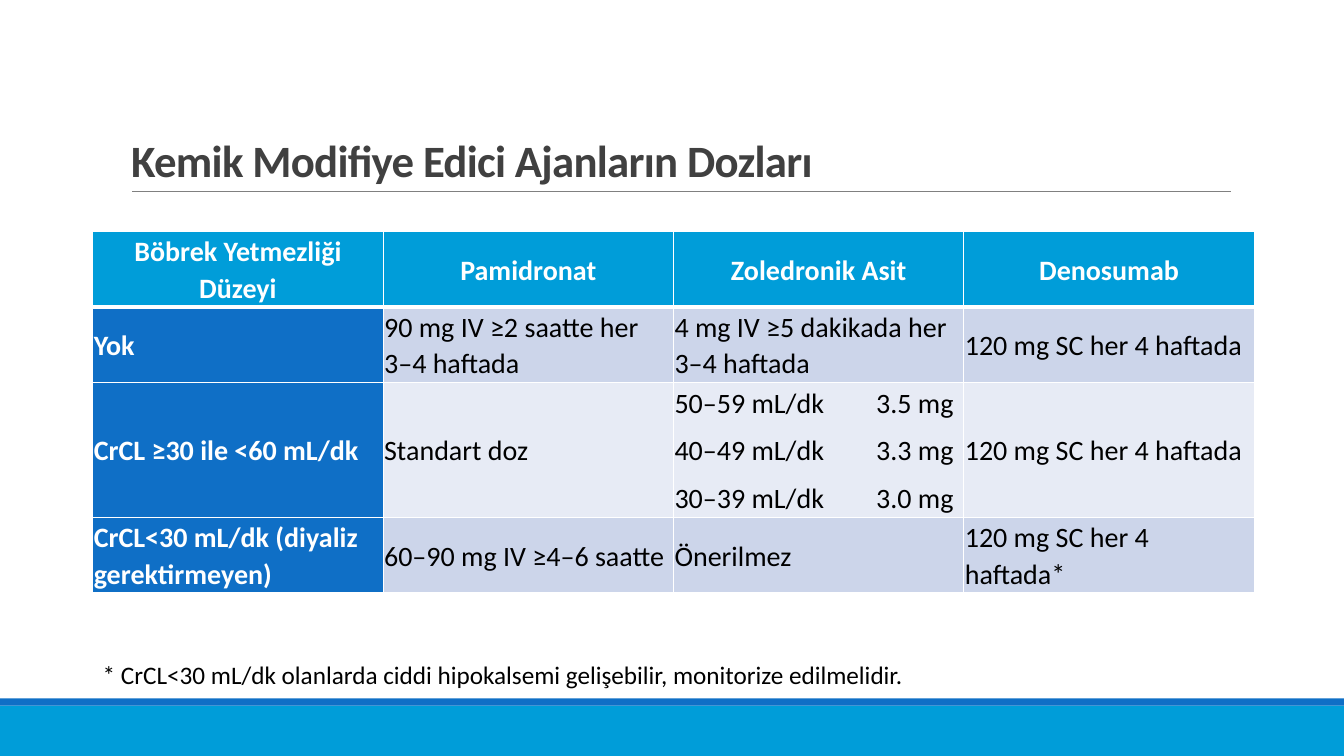
from lxml.etree import SubElement
from pptx import Presentation
from pptx.dml.color import RGBColor
from pptx.enum.shapes import MSO_CONNECTOR, MSO_SHAPE
from pptx.enum.text import MSO_ANCHOR, MSO_AUTO_SIZE, PP_ALIGN
from pptx.oxml.ns import qn
from pptx.util import Inches, Pt

TITLE = "Kemik Modifiye Edici Ajanların Dozları"
FOOTNOTE = "* CrCL<30 mL/dk olanlarda ciddi hipokalsemi gelişebilir, monitorize edilmelidir."
DOSES = [
    ["Böbrek Yetmezliği Düzeyi", "Pamidronat", "Zoledronik Asit", "Denosumab"],
    ["Yok", "90 mg IV ≥2 saatte her 3–4 haftada",
     "4 mg IV ≥5 dakikada her 3–4 haftada", "120 mg SC her 4 haftada"],
    ["CrCL ≥30 ile <60 mL/dk", "Standart doz",
     "50–59 mL/dk\t3.5 mg\n40–49 mL/dk\t3.3 mg\n30–39 mL/dk\t3.0 mg",
     "120 mg SC her 4 haftada"],
    ["CrCL<30 mL/dk (diyaliz gerektirmeyen)", "60–90 mg IV ≥4–6 saatte",
     "Önerilmez", "120 mg SC her 4 haftada*"],
]
ROW_HEIGHTS = [0.74, 0.74, 1.34, 0.74]
COLUMN_WIDTH = 2.88
DOSE_TAB = 2
COLORS = {
    "cyan": "009DD9", "blue": "0F6FC6", "odd_row": "CCD5EA", "even_row": "E7EBF5",
    "title": "404040", "rule": "808080", "white": "FFFFFF", "black": "000000",
}


def color(name):
    return RGBColor.from_string(COLORS[name])


def add_span(para, text, size, color_name, bold=False):
    span = para.add_run()
    span.text = text
    span.font.name = "Calibri"
    span.font.size = Pt(size)
    span.font.bold = bold
    span.font.color.rgb = color(color_name)
    return span


def add_bar(page, top, height, color_name):
    bar = page.shapes.add_shape(
        MSO_SHAPE.RECTANGLE, 0, Inches(top), Inches(13.33), Inches(height))
    bar.shadow.inherit = False
    bar.fill.solid()
    bar.fill.fore_color.rgb = color(color_name)
    bar.line.fill.background()


def add_title(page):
    rule = page.shapes.add_connector(
        MSO_CONNECTOR.STRAIGHT, Inches(1.31), Inches(1.9), Inches(12.21), Inches(1.9))
    rule.line.color.rgb = color("rule")
    rule.line.width = Pt(0.5)
    SubElement(rule._element.spPr, qn("a:effectLst"))

    title = page.shapes.title
    title.left, title.top = Inches(1.2), Inches(0.31)
    title.width, title.height = Inches(11), Inches(1.59)
    frame = title.text_frame
    frame.auto_size = MSO_AUTO_SIZE.NONE
    frame.vertical_anchor = MSO_ANCHOR.BOTTOM
    para = frame.paragraphs[0]
    para.alignment = PP_ALIGN.LEFT
    para.line_spacing = 0.85
    span = add_span(para, TITLE, 32, "title", bold=True)
    span.font._element.set("spc", "-50")


def set_borders(cell, row):
    widths = {"lnL": 1, "lnR": 1, "lnT": 3 if row == 1 else 1, "lnB": 3 if row == 0 else 1}
    properties = cell._tc.get_or_add_tcPr()
    for position, (side, width) in enumerate(widths.items()):
        border = SubElement(properties, qn(f"a:{side}"), w=str(Pt(width)))
        properties.insert(position, border)
        fill = SubElement(border, qn("a:solidFill"))
        SubElement(fill, qn("a:srgbClr"), val=COLORS["white"])


def fill_cell(cell, text, row, column):
    heading = row == 0 or column == 0
    if row == 0:
        fill_name = "cyan"
    elif column == 0:
        fill_name = "blue"
    else:
        fill_name = "odd_row" if row % 2 else "even_row"
    cell.fill.solid()
    cell.fill.fore_color.rgb = color(fill_name)
    set_borders(cell, row)
    cell.vertical_anchor = MSO_ANCHOR.MIDDLE
    cell.margin_left = cell.margin_right = Inches(0.01)
    cell.margin_top = cell.margin_bottom = Inches(0.01)
    frame = cell.text_frame
    for index, line in enumerate(text.split("\n")):
        para = frame.add_paragraph() if index else frame.paragraphs[0]
        if "\t" in line:
            tabs = SubElement(para._p.get_or_add_pPr(), qn("a:tabLst"))
            SubElement(tabs, qn("a:tab"), pos=str(Inches(DOSE_TAB)), algn="l")
        para.alignment = PP_ALIGN.CENTER if row == 0 else PP_ALIGN.LEFT
        para.line_spacing = 1.07
        para.space_after = Pt(8)
        add_span(para, line, 20, "white" if heading else "black", bold=heading)


def add_dose_table(page):
    columns = len(DOSES[0])
    table = page.shapes.add_table(
        len(DOSES), columns, Inches(0.92), Inches(2.3),
        Inches(COLUMN_WIDTH * columns), Inches(sum(ROW_HEIGHTS))).table
    for column in table.columns:
        column.width = Inches(COLUMN_WIDTH)
    for row, texts in enumerate(DOSES):
        table.rows[row].height = Inches(ROW_HEIGHTS[row])
        for column, text in enumerate(texts):
            fill_cell(table.cell(row, column), text, row, column)


def add_footnote(page):
    box = page.shapes.add_textbox(Inches(0.92), Inches(6.49), Inches(9.49), Inches(0.4))
    box.text_frame.word_wrap = True
    add_span(box.text_frame.paragraphs[0], FOOTNOTE, 18, "black")


def main():
    deck = Presentation()
    deck.slide_width, deck.slide_height = Inches(13.33), Inches(7.5)
    page = deck.slides.add_slide(deck.slide_layouts[5])
    page.background.fill.solid()
    page.background.fill.fore_color.rgb = color("white")
    add_bar(page, 7, 0.5, "cyan")
    add_bar(page, 6.93, 0.07, "blue")
    add_title(page)
    add_dose_table(page)
    add_footnote(page)
    deck.save("out.pptx")


if __name__ == "__main__":
    main()
